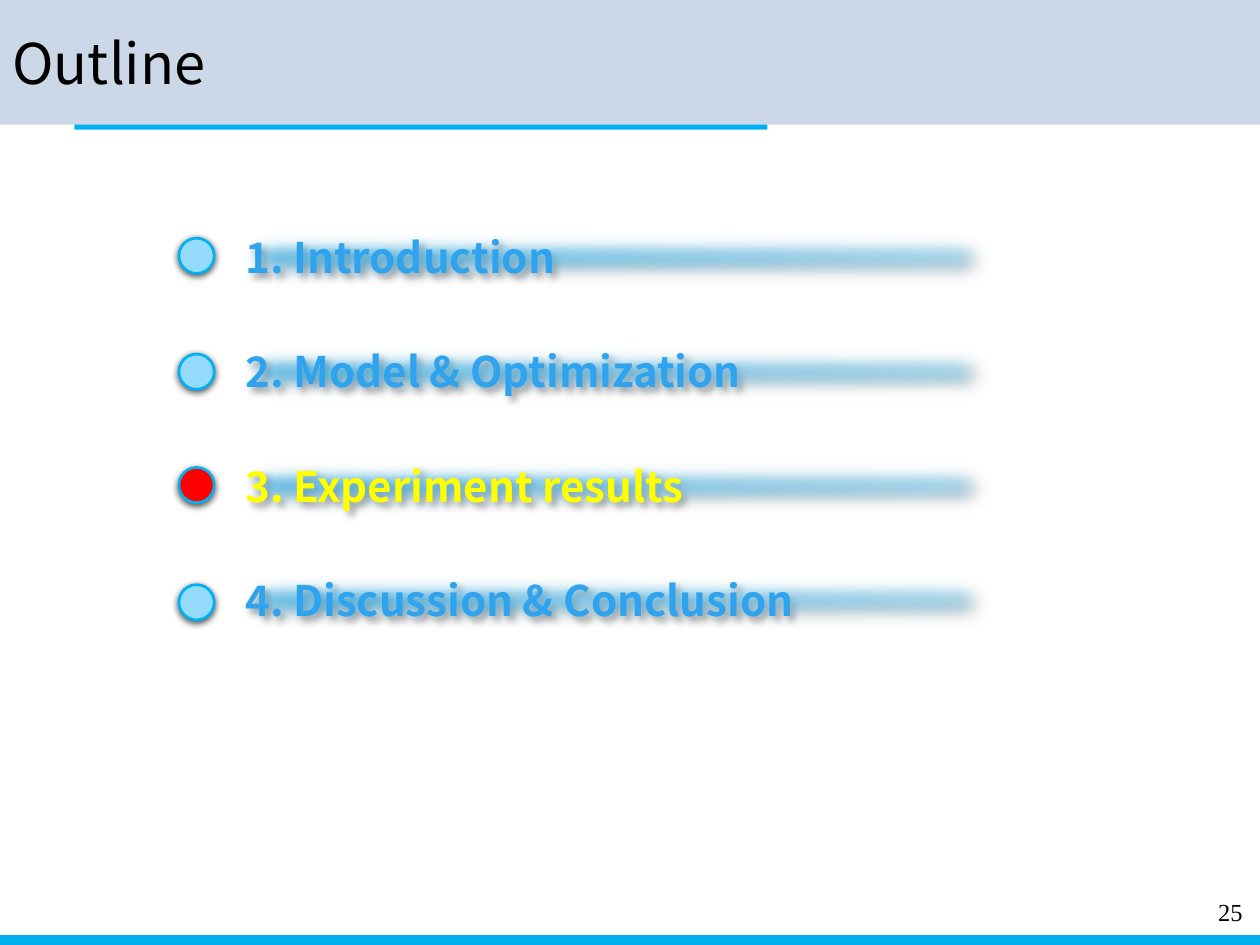
from dataclasses import dataclass
from typing import Optional

from lxml import etree
from pptx import Presentation
from pptx import util as u
from pptx.dml.color import RGBColor
from pptx.enum import shapes, text
from pptx.oxml import ns


@dataclass(frozen=True)
class Theme:
    sans: str = "Noto Sans CJK SC"
    serif: str = "Times New Roman"
    title_size: int = 32
    item_size: int = 24
    number_size: int = 14
    black: str = "000000"
    band: str = "CCD8E7"
    accent: str = "00B0F0"
    dot: str = "93DAFB"
    active_dot: str = "FF0000"
    item: str = "2FA3EE"
    active_item: str = "FFFF00"
    bar_light: str = "8BD8FA"
    bar_dark: str = "18B0F6"
    bar_line: str = "B5D2E2"


@dataclass(frozen=True)
class Box:
    left: float
    top: float
    width: float
    height: float

    def lengths(self) -> tuple:
        return tuple(u.Inches(v) for v in (self.left, self.top, self.width, self.height))


@dataclass(frozen=True)
class Shadow:
    opacity: int
    blur: float
    distance: float
    angle: int


@dataclass(frozen=True)
class Section:
    label: str
    dot_top: float
    active: bool = False


THEME = Theme()
DOT_SHADOW = Shadow(68, 4, 1.2, 90)
BAR_SHADOW = Shadow(40, 4, 3, 45)
SOFT_EDGE = 12.5
FIRST_BAR, LAST_BAR = 1.79, 4.51
SECTIONS = [
    Section("1. Introduction", 1.89),
    Section("2. Model & Optimization", 2.81),
    Section("3. Experiment results", 3.71, True),
    Section("4. Discussion & Conclusion", 4.64),
]


def color(value: str) -> RGBColor:
    return RGBColor.from_string(value)


def add_effects(shape, shadow: Shadow, soft_edge: float = 0) -> None:
    effects = shape._element.spPr.find(ns.qn("a:effectLst"))
    outer = etree.SubElement(
        effects, ns.qn("a:outerShdw"), blurRad=str(u.Pt(shadow.blur)),
        dist=str(u.Pt(shadow.distance)), dir=str(shadow.angle * 60000),
        algn="ctr", rotWithShape="0")
    tint = etree.SubElement(outer, ns.qn("a:srgbClr"), val=THEME.black)
    etree.SubElement(tint, ns.qn("a:alpha"), val=str(shadow.opacity * 1000))
    if soft_edge:
        etree.SubElement(effects, ns.qn("a:softEdge"), rad=str(u.Pt(soft_edge)))


def add_shape(slide, kind, box: Box, fill: Optional[str],
              line: Optional[str] = None, weight: float = 1.5):
    shape = slide.shapes.add_shape(kind, *box.lengths())
    shape.shadow.inherit = False
    if fill:
        shape.fill.solid()
        shape.fill.fore_color.rgb = color(fill)
    if line:
        shape.line.color.rgb = color(line)
        shape.line.width = u.Pt(weight)
    else:
        shape.line.fill.background()
    return shape


def write(shape, words: str, font: str, size: int, tone: str, bold: bool = False) -> None:
    frame = shape.text_frame
    frame.word_wrap = True
    frame.auto_size = text.MSO_AUTO_SIZE.SHAPE_TO_FIT_TEXT
    frame.vertical_anchor = text.MSO_ANCHOR.TOP
    paragraph = frame.paragraphs[0]
    paragraph.alignment = text.PP_ALIGN.LEFT
    run = paragraph.add_run()
    run.text = words
    run.font.name = font
    run.font.size = u.Pt(size)
    run.font.bold = bold
    run.font.color.rgb = color(tone)


def add_section(slide, section: Section, bar_top: float) -> None:
    dot = add_shape(slide, shapes.MSO_SHAPE.OVAL, Box(1.42, section.dot_top, 0.28, 0.28),
                    THEME.active_dot if section.active else THEME.dot, THEME.accent)
    add_effects(dot, DOT_SHADOW)

    bar = add_shape(slide, shapes.MSO_SHAPE.RECTANGLE, Box(1.85, bar_top, 6.06, 0.5),
                    None, THEME.bar_line, 0.75)
    bar.fill.gradient()
    bar.fill.gradient_angle = 180
    for stop, tone in zip(bar.fill.gradient_stops, (THEME.bar_light, THEME.bar_dark)):
        stop.color.rgb = color(tone)
    add_effects(bar, BAR_SHADOW, SOFT_EDGE)
    write(bar, section.label, THEME.sans, THEME.item_size,
          THEME.active_item if section.active else THEME.item, True)


def main() -> None:
    presentation = Presentation()
    presentation.slide_width = u.Inches(10)
    presentation.slide_height = u.Inches(7.5)
    slide = presentation.slides.add_slide(presentation.slide_layouts[6])
    rectangle = shapes.MSO_SHAPE.RECTANGLE

    add_shape(slide, rectangle, Box(0.59, 0.98, 5.5, 0.05), THEME.accent)
    add_shape(slide, rectangle, Box(0, 7.43, 10, 0.07), THEME.accent, THEME.accent, 1.25)
    number = slide.shapes.add_textbox(*Box(9.57, 7.07, 0.43, 0.34).lengths())
    write(number, "25", THEME.serif, THEME.number_size, THEME.black)

    add_shape(slide, rectangle, Box(0, 0, 10, 0.99), THEME.band)
    title = slide.shapes.add_textbox(*Box(0, 0.18, 2.1, 0.64).lengths())
    write(title, "Outline", THEME.sans, THEME.title_size, THEME.black)

    pitch = (LAST_BAR - FIRST_BAR) / (len(SECTIONS) - 1)
    for index, section in enumerate(SECTIONS):
        add_section(slide, section, FIRST_BAR + index * pitch)

    presentation.save("out.pptx")


if __name__ == "__main__":
    main()
